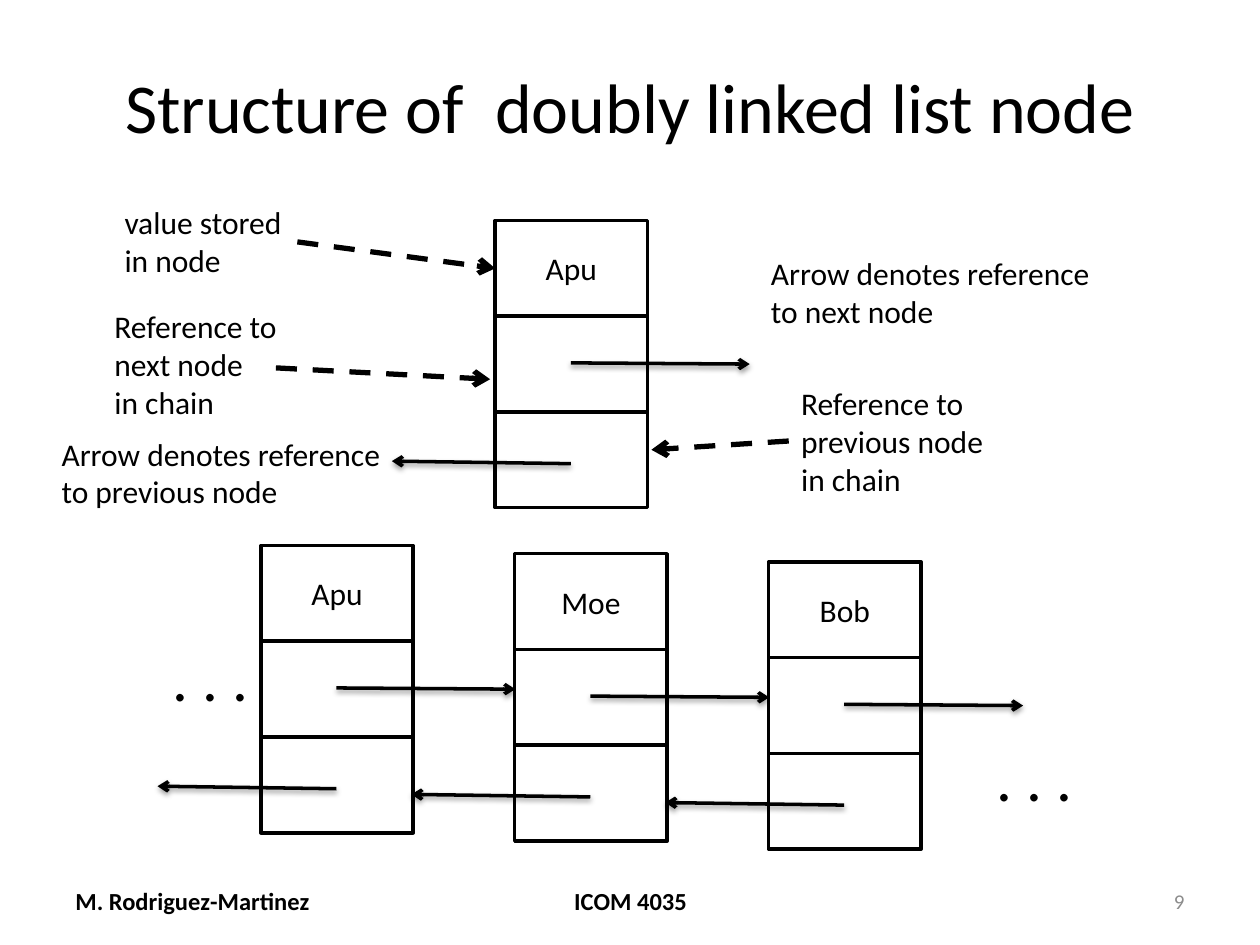
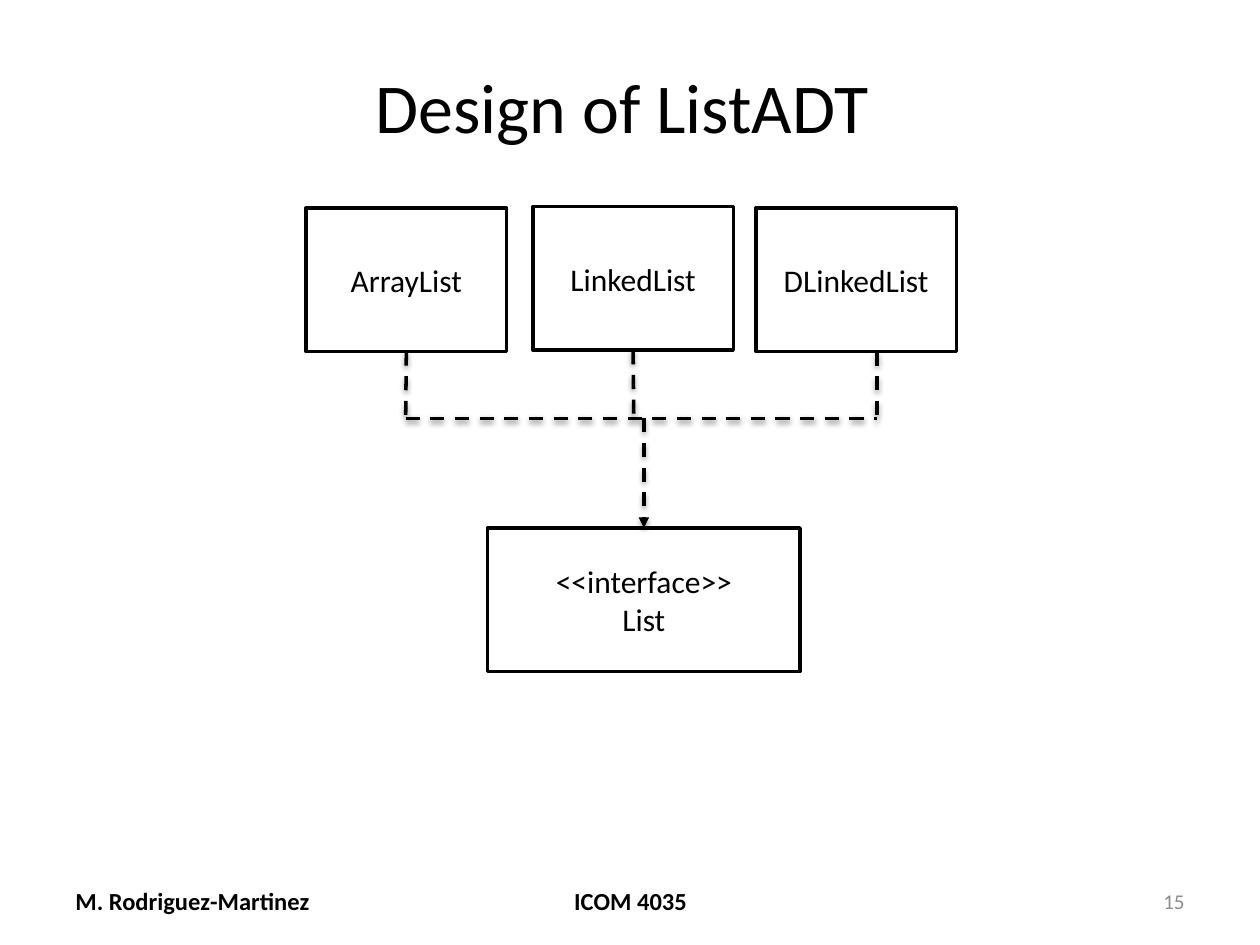
from lxml import etree
from pptx import Presentation
from pptx.dml.color import RGBColor
from pptx.enum.dml import MSO_LINE
from pptx.enum.shapes import MSO_CONNECTOR, MSO_SHAPE
from pptx.enum.text import MSO_ANCHOR, MSO_AUTO_SIZE, PP_ALIGN
from pptx.oxml.ns import qn
from pptx.util import Inches, Pt

BLACK = RGBColor(0x00, 0x00, 0x00)
WHITE = RGBColor(0xFF, 0xFF, 0xFF)
GRAY = RGBColor(0x8C, 0x8C, 0x8C)
FONT = "Calibri"
LEFT, CENTER, RIGHT = PP_ALIGN.LEFT, PP_ALIGN.CENTER, PP_ALIGN.RIGHT
MIDDLE, TOP = MSO_ANCHOR.MIDDLE, MSO_ANCHOR.TOP
FIT_SHAPE = MSO_AUTO_SIZE.SHAPE_TO_FIT_TEXT
RECT = MSO_SHAPE.RECTANGLE
STRAIGHT = MSO_CONNECTOR.STRAIGHT
DASH = MSO_LINE.DASH
SIDE_TOP, SIDE_LEFT, SIDE_BOTTOM = 0, 1, 2

CELL_W, CELL_H = 1.21, 0.76
BOX_W, BOX_H = 1.59, 1.14


def write(sp, text, size=18, align=LEFT, anchor=TOP, color=BLACK, bold=False):
    tf = sp.text_frame
    tf.text = text
    tf.vertical_anchor = anchor
    for p in tf.paragraphs:
        p.alignment = align
        for r in p.runs:
            r.font.name = FONT
            r.font.size = Pt(size)
            r.font.bold = bold
            r.font.color.rgb = color


def add_text(slide, x, y, w, h, text, wrap=True, **style):
    sp = slide.shapes.add_textbox(Inches(x), Inches(y), Inches(w), Inches(h))
    write(sp, text, **style)
    sp.text_frame.word_wrap = wrap
    return sp


def add_label(slide, x, y, w, h, text, size=18):
    sp = add_text(slide, x, y, w, h, text, wrap=False, size=size)
    sp.text_frame.auto_size = FIT_SHAPE


def add_box(slide, x, y, w, h, text=""):
    sp = slide.shapes.add_shape(RECT, Inches(x), Inches(y), Inches(w), Inches(h))
    sp.shadow.inherit = False
    sp.fill.solid()
    sp.fill.fore_color.rgb = WHITE
    sp.line.color.rgb = BLACK
    sp.line.width = Pt(2)
    if text:
        write(sp, text, align=CENTER, anchor=MIDDLE)
    return sp


def set_effects(line, shadow):
    effects = etree.SubElement(line._element.spPr, qn("a:effectLst"))
    if shadow:
        outer = etree.SubElement(
            effects, qn("a:outerShdw"), blurRad=str(Pt(3.1)), dist=str(Pt(1.6)),
            dir="5400000", rotWithShape="0")
        color = etree.SubElement(outer, qn("a:srgbClr"), val=str(BLACK))
        etree.SubElement(color, qn("a:alpha"), val="38000")


def add_line(slide, start, end, width=2, dashed=False, arrow=None, shadow=True):
    line = slide.shapes.add_connector(STRAIGHT, *map(Inches, start + end))
    line.line.color.rgb = BLACK
    line.line.width = Pt(width)
    if dashed:
        line.line.dash_style = DASH
    if arrow:
        etree.SubElement(line.line._get_or_add_ln(), qn("a:tailEnd"), type=arrow)
    set_effects(line, shadow)
    return line


def add_pointer(slide, start, end):
    return add_line(slide, start, end, width=3, dashed=True, arrow="arrow", shadow=False)


def add_node(slide, x, y, value):
    value_cell = add_box(slide, x, y, CELL_W, CELL_H, value)
    add_box(slide, x, y + CELL_H, CELL_W, CELL_H)
    add_line(slide, (x + 0.6, y + 1.13), (x + 2.02, y + 1.14), arrow="arrow")
    add_box(slide, x, y + 2 * CELL_H, CELL_W, CELL_H)
    add_line(slide, (x + 0.6, y + 1.93), (x - 0.82, y + 1.91), arrow="arrow")
    return value_cell


def add_slide(prs, title, number):
    slide = prs.slides.add_slide(prs.slide_layouts[5])
    sp = slide.shapes.title
    sp.left, sp.top, sp.width, sp.height = map(Inches, (0.5, 0.3, 9, 1.07))
    write(sp, title, size=40, align=CENTER, anchor=MIDDLE)
    add_text(slide, 0.5, 6.95, 2.33, 0.4, "M. Rodriguez-Martinez",
             size=14, anchor=MIDDLE, bold=True)
    add_text(slide, 3.42, 6.95, 3.17, 0.4, "ICOM 4035",
             size=14, align=CENTER, anchor=MIDDLE, bold=True)
    add_text(slide, 7.17, 6.95, 2.33, 0.4, str(number),
             size=12, align=RIGHT, anchor=MIDDLE, color=GRAY)
    return slide


def build_node_slide(prs):
    slide = add_slide(prs, "Structure of  doubly linked list node", 9)
    labels = [
        (0.89, 1.56, 1.47, 0.71, "value stored\nin node"),
        (0.81, 2.39, 1.52, 1.01, "Reference to\nnext node\nin chain"),
        (6.02, 1.97, 2.78, 0.71, "Arrow denotes reference\nto next node"),
        (6.26, 3, 1.67, 1.01, "Reference to\nprevious node\nin chain"),
        (0.39, 3.4, 2.78, 0.71, "Arrow denotes reference\nto previous node"),
    ]
    for label in labels:
        add_label(slide, *label)
    for x, y in ((1.27, 5.02), (7.81, 5.81)):
        add_label(slide, x, y, 0.81, 0.71, ". . .", size=36)

    value_cell = add_node(slide, 3.93, 1.75, "Apu")
    value_pointer = add_pointer(slide, (2.36, 1.92), (3.93, 2.13))
    value_pointer.end_connect(value_cell, SIDE_LEFT)
    add_pointer(slide, (2.19, 2.92), (3.89, 3.01))
    add_pointer(slide, (6.26, 3.5), (5.17, 3.57))

    for i, name in enumerate(("Apu", "Moe", "Bob")):
        add_node(slide, 2.07 + 2.015 * i, 4.33 + 0.065 * i, name)


def build_design_slide(prs):
    slide = add_slide(prs, "Design of ListADT ", 15)
    bus_y = 3.32
    interface = add_box(slide, 3.87, 4.19, 2.48, BOX_H, "<<interface>>\nList")
    classes = [
        ("ArrayList", 2.43, 1.65, 3.22, bus_y),
        ("LinkedList", 4.23, 1.64, 5.03, 3.3),
        ("DLinkedList", 6, 1.65, 6.96, bus_y),
    ]
    for name, x, y, drop_x, drop_y in classes:
        box = add_box(slide, x, y, BOX_W, BOX_H, name)
        drop = add_line(slide, (drop_x, y + BOX_H), (drop_x, drop_y), dashed=True)
        if abs(drop_x - x - BOX_W / 2) < 0.02:
            drop.begin_connect(box, SIDE_BOTTOM)
    add_line(slide, (3.22, bus_y), (6.96, bus_y), dashed=True)
    arrow = add_line(slide, (5.11, bus_y), (5.11, 4.19), dashed=True, arrow="triangle")
    arrow.end_connect(interface, SIDE_TOP)


def main():
    prs = Presentation()
    prs.slide_width, prs.slide_height = Inches(10), Inches(7.5)
    build_node_slide(prs)
    build_design_slide(prs)
    prs.save("out.pptx")


if __name__ == "__main__":
    main()
